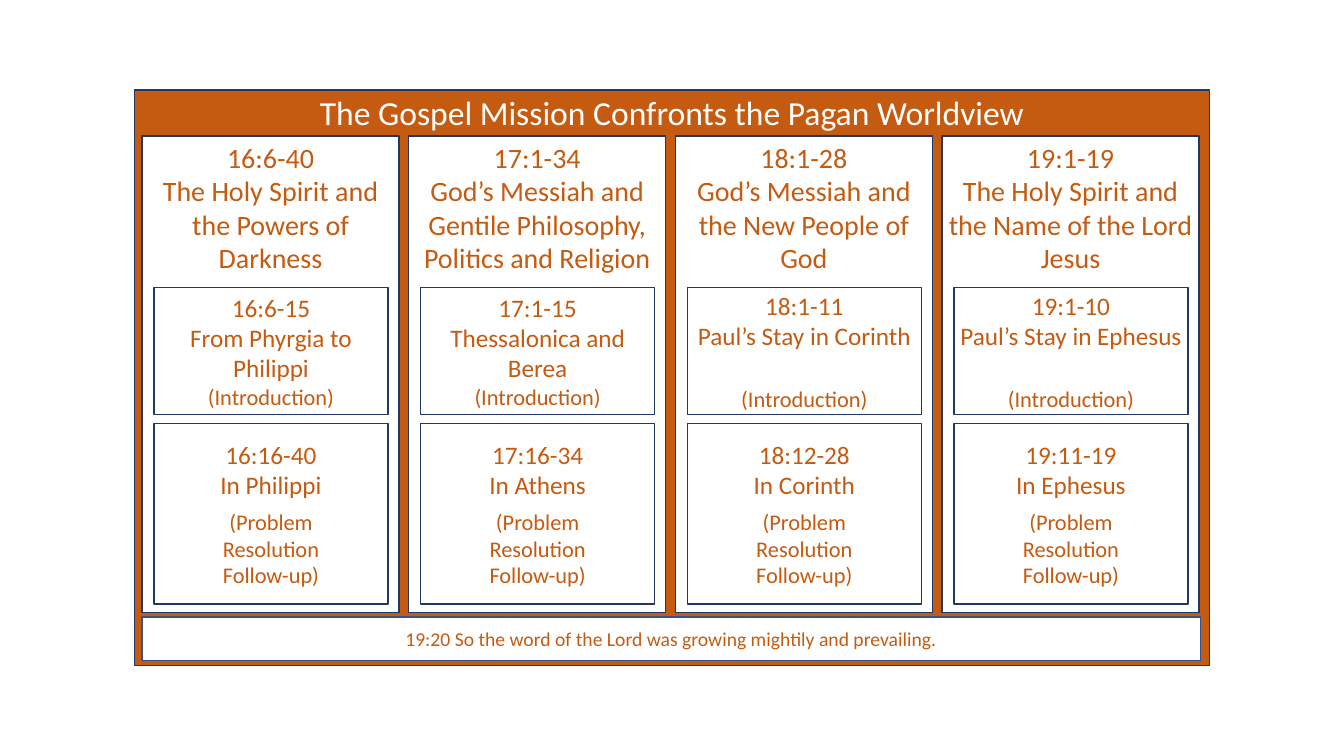
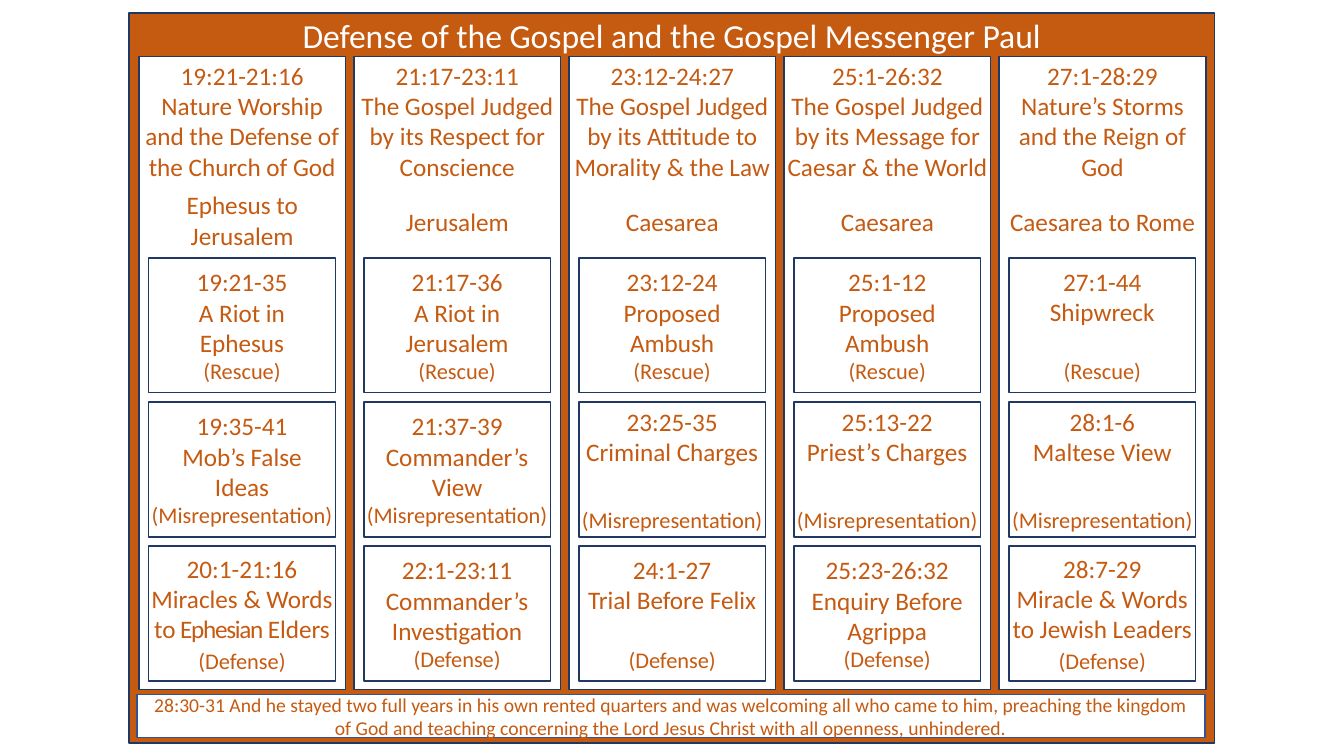
from dataclasses import dataclass

from pptx import Presentation
from pptx.dml.color import RGBColor
from pptx.enum import shapes, text
from pptx.util import Cm, Pt

RUST = RGBColor(0xC5, 0x5A, 0x11)
NAVY = RGBColor(0x20, 0x38, 0x64)
BLUE = RGBColor(0x32, 0x54, 0x91)
WHITE = RGBColor(0xFF, 0xFF, 0xFF)
FONT = "Calibri"
TITLE_ONLY = 5


@dataclass(frozen=True)
class Line:
    words: str
    size: int = 18
    before: float = 0
    after: float = 0
    tight: str = ""


@dataclass(frozen=True)
class Area:
    left: float
    top: float
    width: float
    height: float


@dataclass(frozen=True)
class Style:
    fill: RGBColor
    outline: RGBColor
    ink: RGBColor
    anchor: text.MSO_ANCHOR
    margins: tuple[float, float, float, float]


@dataclass(frozen=True)
class Column:
    heading: list[Line]
    cells: list[list[Line]]


@dataclass(frozen=True)
class Chart:
    title: str
    verse: str
    panel: Area
    column: Area
    step: float
    cell_inset: float
    cell_width: float
    cell_rows: list[tuple[float, float]]
    verse_area: Area
    columns: list[Column]


TOP, MIDDLE = text.MSO_ANCHOR.TOP, text.MSO_ANCHOR.MIDDLE
PANEL = Style(RUST, NAVY, WHITE, TOP, (0.25, 0.05, 0.25, 0.13))
COLUMN = Style(WHITE, NAVY, RUST, TOP, (0, 0.1, 0, 0))
CELL = Style(WHITE, NAVY, RUST, MIDDLE, (0.05, 0.05, 0.05, 0.05))
VERSE = Style(WHITE, BLUE, RUST, MIDDLE, (0.25, 0.13, 0.25, 0.13))


def set_values(target: object, values: dict[str, object]) -> None:
    for name, value in values.items():
        setattr(target, name, value)


def write_line(para, line: Line, ink: RGBColor) -> None:
    set_values(para, {
        "text": "" if line.tight else line.words,
        "alignment": text.PP_ALIGN.CENTER,
        "space_before": Pt(line.before),
        "space_after": Pt(line.after),
    })
    if line.tight:
        for part in line.words.partition(line.tight):
            span = para.add_run()
            span.text = part
            if part == line.tight:
                span.font._element.set("spc", "-90")
    for span in para.runs:
        set_values(span.font, {"name": FONT, "size": Pt(line.size), "bold": False})
        span.font.color.rgb = ink


def format_box(box, area: Area, style: Style, lines: list[Line]) -> None:
    set_values(box, {
        "left": Cm(area.left),
        "top": Cm(area.top),
        "width": Cm(area.width),
        "height": Cm(area.height),
    })
    box.shadow.inherit = False
    box.fill.solid()
    box.fill.fore_color.rgb = style.fill
    box.line.color.rgb = style.outline
    box.line.width = Pt(1)
    frame = box.text_frame
    left, top, right, bottom = map(Cm, style.margins)
    set_values(frame, {
        "word_wrap": True,
        "auto_size": text.MSO_AUTO_SIZE.NONE,
        "vertical_anchor": style.anchor,
        "margin_left": left,
        "margin_top": top,
        "margin_right": right,
        "margin_bottom": bottom,
    })
    for index, line in enumerate(lines):
        para = frame.add_paragraph() if index else frame.paragraphs[0]
        write_line(para, line, style.ink)


def add_box(page, area: Area, style: Style, lines: list[Line]) -> None:
    box = page.shapes.add_shape(shapes.MSO_SHAPE.RECTANGLE, 0, 0, Cm(1), Cm(1))
    format_box(box, area, style, lines)


def add_chart_page(deck, chart: Chart) -> None:
    page = deck.slides.add_slide(deck.slide_layouts[TITLE_ONLY])
    format_box(page.shapes.title, chart.panel, PANEL, [Line(chart.title, 24)])
    base = chart.column
    for index, column in enumerate(chart.columns):
        left = base.left + index * chart.step
        add_box(page, Area(left, base.top, base.width, base.height), COLUMN, column.heading)
        for (top, height), lines in zip(chart.cell_rows, column.cells):
            area = Area(left + chart.cell_inset, top, chart.cell_width, height)
            add_box(page, area, CELL, lines)
    add_box(page, chart.verse_area, VERSE, [Line(chart.verse, 14)])


def cell(passage: str, topic: str, role: str, gap: float = 0, tight: str = "") -> list[Line]:
    return [Line(passage), Line(topic, tight=tight), Line(f"({role})", 16, before=gap)]


def mission(passage: str, theme: str, intro: list[Line], verses: str, place: str) -> Column:
    steps = [Line(step, 16) for step in ("(Problem", "Resolution", "Follow-up)")]
    problem = [Line(verses), Line(f"In {place}", after=6), *steps]
    return Column([Line(passage, 20), Line(theme, 20)], [intro, problem])


def defense(passage: str, theme: str, place: str, cells: list[list[Line]], gap: float = 18) -> Column:
    return Column([Line(passage), Line(theme, after=gap), Line(place)], cells)


MISSION = Chart(
    title="The Gospel Mission Confronts the Pagan Worldview",
    verse="19:20 So the word of the Lord was growing mightily and prevailing.",
    panel=Area(3.39, 2.27, 27.09, 14.5),
    column=Area(3.58, 3.43, 6.48, 12.01),
    step=6.72,
    cell_inset=0.3,
    cell_width=5.9,
    cell_rows=[(7.24, 3.2), (10.67, 4.55)],
    verse_area=Area(3.58, 15.55, 26.67, 1.09),
    columns=[
        mission("16:6-40", "The Holy Spirit and the Powers of Darkness",
                cell("16:6-15", "From Phyrgia to Philippi", "Introduction"),
                "16:16-40", "Philippi"),
        mission("17:1-34", "God’s Messiah and Gentile Philosophy, Politics and Religion",
                cell("17:1-15", "Thessalonica and Berea", "Introduction"),
                "17:16-34", "Athens"),
        mission("18:1-28", "God’s Messiah and the New People of God",
                cell("18:1-11", "Paul’s Stay in Corinth", "Introduction", 24.5),
                "18:12-28", "Corinth"),
        mission("19:1-19", "The Holy Spirit and the Name of the Lord Jesus",
                cell("19:1-10", "Paul’s Stay in Ephesus", "Introduction", 24.5),
                "19:11-19", "Ephesus"),
    ],
)

DEFENSE = Chart(
    title="Defense of the Gospel and the Gospel Messenger Paul",
    verse="28:30-31 And he stayed two full years in his own rented quarters and was "
          "welcoming all who came to him, preaching the kingdom of God and teaching "
          "concerning the Lord Jesus Christ with all openness, unhindered.",
    panel=Area(3.25, 0.33, 27.36, 18.39),
    column=Area(3.5, 1.42, 5.21, 15.95),
    step=5.42,
    cell_inset=0.25,
    cell_width=4.7,
    cell_rows=[(6.5 + row * 3.63, 3.4) for row in range(3)],
    verse_area=Area(3.45, 17.5, 26.92, 1.09),
    columns=[
        defense("19:21-21:16", "Nature Worship\nand the Defense of the Church of God",
                "Ephesus to Jerusalem", [
                    cell("19:21-35", "A Riot in\nEphesus", "Rescue"),
                    cell("19:35-41", "Mob’s False\nIdeas", "Misrepresentation"),
                    cell("20:1-21:16", "Miracles & Words to Ephesian Elders", "Defense",
                         2.5, " Ephesian "),
                ], 6),
        defense("21:17-23:11", "The Gospel Judged by its Respect for Conscience",
                "Jerusalem", [
                    cell("21:17-36", "A Riot in Jerusalem", "Rescue"),
                    cell("21:37-39", "Commander’s View", "Misrepresentation"),
                    cell("22:1-23:11", "Commander’s Investigation", "Defense"),
                ]),
        defense("23:12-24:27", "The Gospel Judged by its Attitude to Morality & the Law",
                "Caesarea", [
                    cell("23:12-24", "Proposed Ambush", "Rescue"),
                    cell("23:25-35", "Criminal Charges", "Misrepresentation", 28),
                    cell("24:1-27", "Trial Before Felix", "Defense", 22),
                ]),
        defense("25:1-26:32", "The Gospel Judged by its Message for Caesar & the World",
                "Caesarea", [
                    cell("25:1-12", "Proposed Ambush", "Rescue"),
                    cell("25:13-22", "Priest’s Charges", "Misrepresentation", 28),
                    cell("25:23-26:32", "Enquiry Before Agrippa", "Defense"),
                ]),
        defense("27:1-28:29", "Nature’s Storms and the Reign of God",
                "Caesarea to Rome", [
                    cell("27:1-44", "Shipwreck", "Rescue", 22),
                    cell("28:1-6", "Maltese View", "Misrepresentation", 28),
                    cell("28:7-29", "Miracle & Words to Jewish Leaders", "Defense", 2.5),
                ]),
    ],
)


def main() -> None:
    deck = Presentation()
    set_values(deck, {"slide_width": Cm(33.87), "slide_height": Cm(19.05)})
    for chart in (MISSION, DEFENSE):
        add_chart_page(deck, chart)
    deck.save("out.pptx")


if __name__ == "__main__":
    main()
